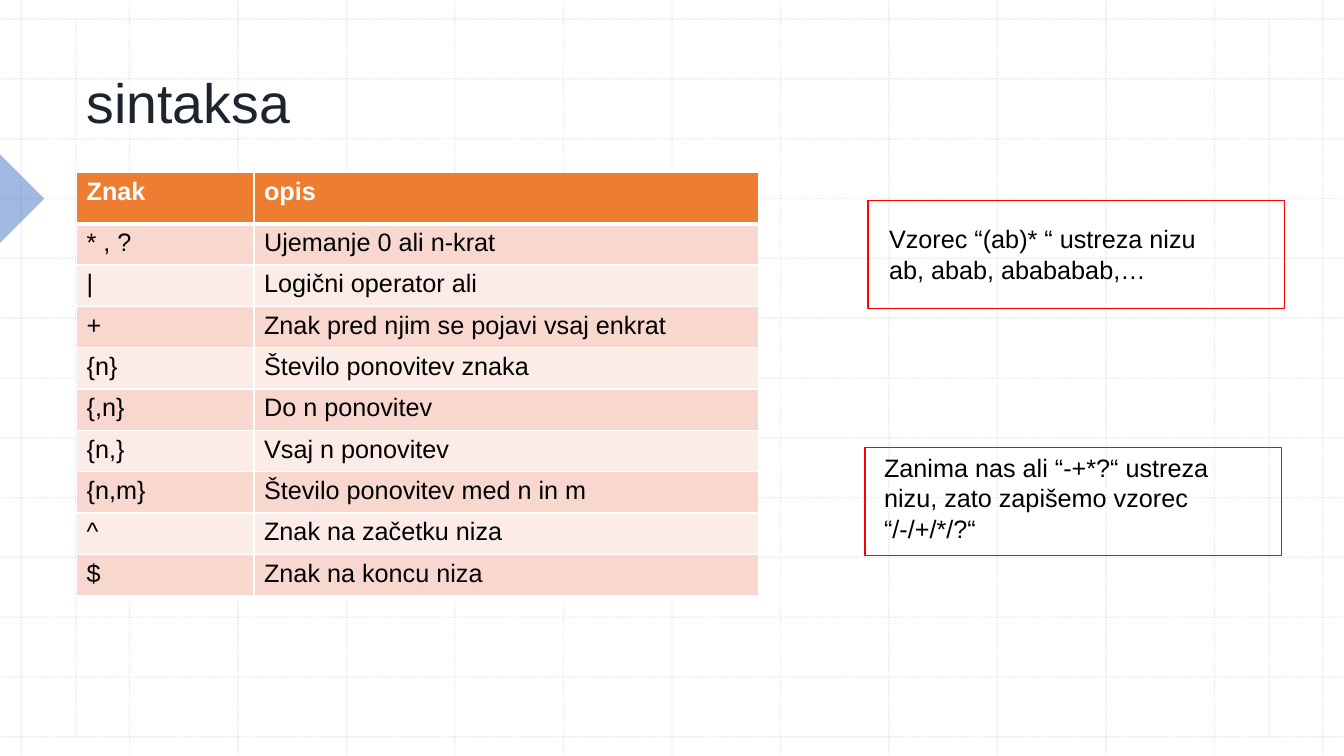
from dataclasses import dataclass

from lxml.etree import SubElement
from pptx import Presentation
from pptx.dml.color import RGBColor
from pptx.enum.dml import MSO_LINE
from pptx.enum.shapes import MSO_CONNECTOR, MSO_SHAPE
from pptx.enum.text import MSO_ANCHOR, MSO_AUTO_SIZE, PP_ALIGN
from pptx.oxml.ns import qn
from pptx.slide import Slide
from pptx.table import _Cell as Cell
from pptx.text.text import _Paragraph as Paragraph
from pptx.util import Inches, Pt


@dataclass(frozen=True)
class Theme:
    font: str = "Arial"
    title_size: float = 39.6
    body_size: float = 18
    title: str = "1D242E"
    text: str = "000000"
    white: str = "FFFFFF"
    grid: str = "BCBCBC"
    marker: str = "4472C4"
    header: str = "ED7D31"
    bands: tuple[str, str] = ("F8D7CE", "FCECE8")
    frame: str = "FF0000"


@dataclass(frozen=True)
class Box:
    left: float
    top: float
    width: float
    height: float

    def lengths(self) -> tuple[Inches, Inches, Inches, Inches]:
        return Inches(self.left), Inches(self.top), Inches(self.width), Inches(self.height)


@dataclass(frozen=True)
class Example:
    text_box: Box
    frame: Box
    paragraphs: tuple[str, ...]


THEME = Theme()
SLIDE_WIDTH, SLIDE_HEIGHT = 13.33, 7.5
GRID_STEPS = 12
GRID_LEFT, GRID_RIGHT = 0.21, 13.12
GRID_TOP, GRID_BOTTOM = 0.19, 7.31
MARGINS = (0.75, 12.59)

TABLE_BOX = Box(0.76, 1.71, 6.76, 4.2)
COLUMN_WIDTHS = (1.76, 5)
HEADER_HEIGHT, ROW_HEIGHT = 0.51, 0.41
ROWS = (
    ("Znak", "opis"),
    ("* , ?", "Ujemanje 0 ali n-krat"),
    ("|", "Logični operator ali"),
    ("+", "Znak pred njim se pojavi vsaj enkrat"),
    ("{n}", "Število ponovitev znaka"),
    ("{,n}", "Do n ponovitev"),
    ("{n,}", "Vsaj n ponovitev"),
    ("{n,m}", "Število ponovitev med n in m"),
    ("^", "Znak na začetku niza"),
    ("$", "Znak na koncu niza"),
)

EXAMPLES = (
    Example(Box(8.72, 2.17, 3.86, 0.71), Box(8.61, 1.99, 4.13, 1.07),
            ("Vzorec “(ab)* “ ustreza nizu", "ab, abab, abababab,…")),
    Example(Box(8.67, 4.44, 4.01, 1.31), Box(8.58, 4.44, 4.13, 1.07),
            ("Zanima nas ali “-+*?“ ustreza nizu, zato zapišemo vzorec", "“/-/+/*/?“")),
)


def color(value: str) -> RGBColor:
    return RGBColor.from_string(value)


def add_run(paragraph: Paragraph, text: str, size: float, text_color: str, bold: bool = False) -> None:
    run = paragraph.add_run()
    run.text = text
    run.font.name = THEME.font
    run.font.size = Pt(size)
    run.font.bold = bold
    run.font.color.rgb = color(text_color)


def set_opacity(fill_element, percent: int) -> None:
    for color_element in fill_element.iter(qn("a:srgbClr")):
        SubElement(color_element, qn("a:alpha"), val=str(percent * 1000))


def add_grid_line(slide: Slide, x1: float, y1: float, x2: float, y2: float) -> None:
    connector = slide.shapes.add_connector(
        MSO_CONNECTOR.STRAIGHT, Inches(x1), Inches(y1), Inches(x2), Inches(y2))
    connector.line.color.rgb = color(THEME.grid)
    connector.line.width = Pt(1)
    connector.line.dash_style = MSO_LINE.ROUND_DOT
    properties = connector.element.spPr
    set_opacity(properties, 30)
    SubElement(properties, qn("a:effectLst"))


def add_grid(slide: Slide) -> None:
    for step in range(GRID_STEPS + 1):
        x = GRID_LEFT + (GRID_RIGHT - GRID_LEFT) * step / GRID_STEPS
        y = GRID_TOP + (GRID_BOTTOM - GRID_TOP) * step / GRID_STEPS
        add_grid_line(slide, x, 0, x, SLIDE_HEIGHT)
        add_grid_line(slide, 0, y, SLIDE_WIDTH, y)
    for x in MARGINS:
        add_grid_line(slide, x, GRID_TOP, x, GRID_BOTTOM)


def add_marker(slide: Slide) -> None:
    marker = slide.shapes.add_shape(MSO_SHAPE.RIGHT_TRIANGLE, *Box(-0.31, 1.66, 0.62, 0.62).lengths())
    marker.rotation = 225
    marker.shadow.inherit = False
    marker.fill.solid()
    marker.fill.fore_color.rgb = color(THEME.marker)
    set_opacity(marker.element.spPr, 50)
    marker.line.fill.background()


def set_borders(cell: Cell, bottom: float, top: float) -> None:
    properties = cell._tc.get_or_add_tcPr()
    for side, width in (("L", 1), ("R", 1), ("T", top), ("B", bottom)):
        line = SubElement(properties, qn(f"a:ln{side}"), w=str(Pt(width)))
        fill = SubElement(line, qn("a:solidFill"))
        SubElement(fill, qn("a:srgbClr"), val=THEME.white)


def add_syntax_table(slide: Slide) -> None:
    table = slide.shapes.add_table(len(ROWS), len(COLUMN_WIDTHS), *TABLE_BOX.lengths()).table
    for column, width in zip(table.columns, COLUMN_WIDTHS):
        column.width = Inches(width)
    for row_index, texts in enumerate(ROWS):
        is_header = row_index == 0
        table.rows[row_index].height = Inches(HEADER_HEIGHT if is_header else ROW_HEIGHT)
        for column_index, text in enumerate(texts):
            cell = table.cell(row_index, column_index)
            set_borders(cell, bottom=3 if is_header else 1, top=3 if row_index == 1 else 1)
            cell.fill.solid()
            cell.fill.fore_color.rgb = color(
                THEME.header if is_header else THEME.bands[(row_index - 1) % 2])
            add_run(cell.text_frame.paragraphs[0], text, THEME.body_size,
                    THEME.white if is_header else THEME.text, is_header)


def add_title(slide: Slide) -> None:
    title = slide.shapes.title
    title.left, title.top, title.width, title.height = Box(0.76, 0.56, 11.29, 0.83).lengths()
    frame = title.text_frame
    frame.auto_size = MSO_AUTO_SIZE.NONE
    frame.vertical_anchor = MSO_ANCHOR.BOTTOM
    paragraph = frame.paragraphs[0]
    paragraph.alignment = PP_ALIGN.LEFT
    add_run(paragraph, "sintaksa", THEME.title_size, THEME.title)
    # Bring the title in front of the grid
    title.element.getparent().append(title.element)


def add_example(slide: Slide, example: Example) -> None:
    frame = slide.shapes.add_textbox(*example.text_box.lengths()).text_frame
    frame.word_wrap = True
    frame.auto_size = MSO_AUTO_SIZE.SHAPE_TO_FIT_TEXT
    for index, text in enumerate(example.paragraphs):
        paragraph = frame.add_paragraph() if index else frame.paragraphs[0]
        add_run(paragraph, text, THEME.body_size, THEME.text)

    border = slide.shapes.add_shape(MSO_SHAPE.RECTANGLE, *example.frame.lengths())
    border.shadow.inherit = False
    border.fill.background()
    border.line.color.rgb = color(THEME.frame)
    border.line.width = Pt(1)


def main() -> None:
    presentation = Presentation()
    presentation.slide_width = Inches(SLIDE_WIDTH)
    presentation.slide_height = Inches(SLIDE_HEIGHT)
    title_only = presentation.slide_layouts.get_by_name("Title Only")
    slide = presentation.slides.add_slide(title_only)

    # Background
    add_grid(slide)
    add_marker(slide)

    # Content
    add_syntax_table(slide)
    add_title(slide)
    for example in EXAMPLES:
        add_example(slide, example)

    presentation.save("out.pptx")


if __name__ == "__main__":
    main()
